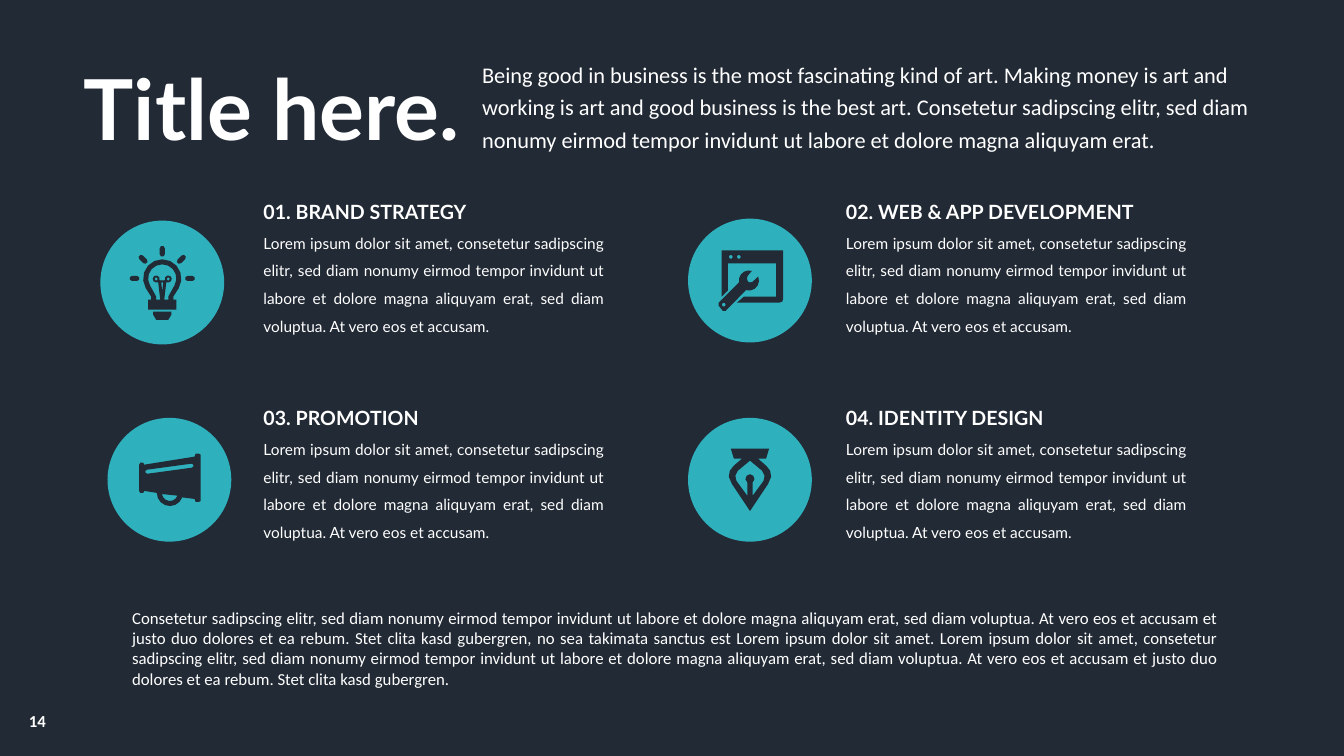
from dataclasses import dataclass
from math import atan2, cos, degrees, radians, sin
from typing import Any

from pptx import Presentation
from pptx.dml.color import RGBColor
from pptx.enum.shapes import MSO_SHAPE
from pptx.enum.text import MSO_AUTO_SIZE, PP_ALIGN
from pptx.util import Cm, Pt

Point = tuple[float, float]
Contour = list[Point]


@dataclass(frozen=True)
class Theme:
    """Colours, fonts and type sizes of the slide."""
    dark: RGBColor = RGBColor(0x22, 0x2A, 0x35)
    teal: RGBColor = RGBColor(0x2E, 0xB0, 0xBD)
    white: RGBColor = RGBColor(0xFF, 0xFF, 0xFF)
    heading_font: str = "Lato"
    body_font: str = "Calibri"
    title: int = 60
    intro: int = 16
    label: int = 14
    note: int = 12
    detail: int = 11


@dataclass(frozen=True)
class Service:
    """One service with its label, column, row, badge corner and icon."""
    label: str
    label_width: float
    column: int
    row: int
    badge_left: float
    badge_top: float
    icon: list[Contour]


THEME = Theme()
BADGE_SIZE = 3.12
ICON_UNIT = 0.0254
TEXT_LEFT, COLUMN_STEP = 6.39, 14.68
LABEL_TOP, ROW_STEP = 4.91, 5.2
DETAIL = ("Lorem ipsum dolor sit amet, consetetur sadipscing elitr, sed diam nonumy eirmod tempor "
          "invidunt ut labore et dolore magna aliquyam erat, sed diam voluptua. "
          "At vero eos et accusam.")
INTRO = ("Being good in business is the most fascinating kind of art. Making money is art and "
         "working is art and good business is the best art. Consetetur sadipscing elitr, sed diam "
         "nonumy eirmod tempor invidunt ut labore et dolore magna aliquyam erat.")
NOTE = ("Consetetur sadipscing elitr, sed diam nonumy eirmod tempor invidunt ut labore et dolore "
        "magna aliquyam erat, sed diam voluptua. At vero eos et accusam et justo duo dolores et ea "
        "rebum. Stet clita kasd gubergren, no sea takimata sanctus est Lorem ipsum dolor sit amet. "
        "Lorem ipsum dolor sit amet, consetetur sadipscing elitr, sed diam nonumy eirmod tempor "
        "invidunt ut labore et dolore magna aliquyam erat, sed diam voluptua. At vero eos et "
        "accusam et justo duo dolores et ea rebum. Stet clita kasd gubergren.")


def arc(x: float, y: float, radius: float, start: float = 0, end: float = 360) -> Contour:
    """Return points along an arc in degrees, fewer on a small radius."""
    steps = round(abs(end - start) / (60 if radius < 3 else 45 if radius < 6 else 24))
    angles = [radians(start + (end - start) * step / steps) for step in range(steps + 1)]
    return [(x + radius * cos(angle), y + radius * sin(angle)) for angle in angles]


def capsule(x1: float, y1: float, x2: float, y2: float, radius: float) -> Contour:
    """Return the outline of a bar with round ends."""
    turn = degrees(atan2(y2 - y1, x2 - x1))
    return arc(x1, y1, radius, turn + 90, turn + 270) + arc(x2, y2, radius, turn - 90, turn + 90)


def mirrored(half: Contour) -> Contour:
    """Close a left half with its reflection across the vertical axis."""
    return half + [(-x, y) for x, y in reversed(half)]


def bulb_icon() -> list[Contour]:
    """Return the contours of a light bulb with five rays."""
    rays = [capsule(0, -34, 0, -28, 2.5)]
    for side in (-1, 1):
        rays += [capsule(side * 30, -4, side * 25, -4, 2.5),
                 capsule(side * 21, -25, side * 17, -21, 2.5)]
    glass = mirrored(arc(0, -4, 19, 270, 150)
                     + [(-11, 14), (-11, 17), (-14, 17), (-14, 27)])
    inside = mirrored(arc(0, -4, 14, 270, 150) + [(-6, 14), (-6, 17), (-2, 17), (-4, 0)]
                      + arc(-6, -3.5, 3.5, 90, 380) + [(-1, -2)])
    foot = mirrored([(-9, 29), (-9, 32), (-6, 37)])
    filament = [arc(-6, -3.5, 1.5), arc(6, -3.5, 1.5), [(0, 9), (-1, 0), (1, 0)]]
    return [*rays, glass, inside, foot, *filament]


def browser_icon() -> list[Contour]:
    """Return the contours of a browser window with a wrench."""
    window = [(-28, -30), (33, -30), (33, 18), (32, 21), (29, 22), (-13, 22), (-6, 16),
              (26, 16), (26, -17), (-22, -17), (-22, 10), (-28, 16)]
    wrench = (arc(-1, 0, 10, -24, 107) + [(-24, 30), (-27, 30), (-31, 25), (-31, 22)]
              + arc(-1, 0, 10, 170, 287) + [(-2, -5), (-3, -2), (-2, 1), (0, 2), (3, 1)])
    return [window, wrench, arc(-26, 24, 2), arc(-19, -23.5, 2), arc(-11, -23.5, 2)]


def megaphone_icon() -> list[Contour]:
    """Return the contours of a megaphone."""
    horn = ([(-29, -17), (-26, -17), (-25, -15), (25, -23), (26, -26), (29, -26), (31, -25),
             (31, 21), (29, 22), (26, 22), (25, 19)] + arc(0.5, 13, 13, 20, 180)
            + [(-25, 11), (-26, 13), (-29, 13), (-30, 11), (-30, -15)])
    return [horn, arc(0.5, 13, 8, 20, 172), capsule(-22, -8, 22, -14, 2)]


def pen_icon() -> list[Contour]:
    """Return the contours of a pen nib."""
    nib = mirrored([(-19, -31), (-16, -21), (-8, -21), (-16, -14), (-20, -9), (-21, -3),
                    (-18, 4), (0, 31)])
    inside = mirrored([(0, -19), (-12, -9), (-14.5, -4), (-13.5, 1), (-2.5, 16), (-2.5, 5)]
                      + arc(0, -1, 4.5, 125, 270))
    return [nib, inside]


SERVICES = [
    Service("01. BRAND STRATEGY", 5.72, 0, 0, 2.53, 5.56, bulb_icon()),
    Service("03. PROMOTION", 4.47, 0, 1, 2.71, 10.53, megaphone_icon()),
    Service("02. WEB & APP DEVELOPMENT", 7.85, 1, 0, 17.34, 5.51, browser_icon()),
    Service("04. IDENTITY DESIGN", 5.49, 1, 1, 17.34, 10.53, pen_icon()),
]


def add_text(shapes: Any, text: str, left: float, top: float, width: float, height: float, *,
             size: int, font: str = THEME.heading_font, bold: bool = False, wrap: bool = True,
             grow: bool = True, align: PP_ALIGN = PP_ALIGN.LEFT,
             line_spacing: Any = None, space_before: int = 0) -> None:
    """Add a white one-paragraph text box, placed in centimetres."""
    frame = shapes.add_textbox(Cm(left), Cm(top), Cm(width), Cm(height)).text_frame
    frame.word_wrap = wrap
    frame.auto_size = MSO_AUTO_SIZE.SHAPE_TO_FIT_TEXT if grow else MSO_AUTO_SIZE.NONE
    paragraph = frame.paragraphs[0]
    paragraph.alignment = align
    paragraph.line_spacing = line_spacing
    paragraph.space_before = Pt(space_before)
    run = paragraph.add_run()
    run.text = text
    run.font.name, run.font.size, run.font.bold = font, Pt(size), bold
    run.font.color.rgb = THEME.white


def paint(shape: Any, color: RGBColor) -> None:
    """Give a shape a flat fill without line or shadow."""
    shape.fill.solid()
    shape.fill.fore_color.rgb = color
    shape.line.fill.background()
    shape.shadow.inherit = False


def add_icon(shapes: Any, contours: list[Contour], center_x: float, center_y: float) -> None:
    """Draw all contours as one freeform around a centre."""
    placed = [[(Cm(center_x + x * ICON_UNIT), Cm(center_y + y * ICON_UNIT)) for x, y in contour]
              for contour in contours]
    builder = shapes.build_freeform(*placed[0][0])
    for index, contour in enumerate(placed):
        if index:
            builder.move_to(*contour[0])
        builder.add_line_segments(contour[1:], close=True)
    paint(builder.convert_to_shape(), THEME.dark)


def add_service(slide: Any, service: Service) -> None:
    """Draw a service as a group of badge, icon, label and detail."""
    shapes = slide.shapes.add_group_shape().shapes
    badge = shapes.add_shape(MSO_SHAPE.OVAL, Cm(service.badge_left), Cm(service.badge_top),
                             Cm(BADGE_SIZE), Cm(BADGE_SIZE))
    paint(badge, THEME.teal)
    add_icon(shapes, service.icon, service.badge_left + BADGE_SIZE / 2,
             service.badge_top + BADGE_SIZE / 2)
    left = TEXT_LEFT + service.column * COLUMN_STEP
    top = LABEL_TOP + service.row * ROW_STEP
    add_text(shapes, service.label, left, top, service.label_width, 0.86,
             size=THEME.label, bold=True, wrap=False)
    add_text(shapes, DETAIL, left, top + 0.62, 9.09, 3.07,
             size=THEME.detail, align=PP_ALIGN.JUSTIFY, line_spacing=1.5)


def main() -> None:
    """Build the services slide and save it."""
    presentation = Presentation()
    presentation.slide_width, presentation.slide_height = Cm(33.87), Cm(19.05)
    slide = presentation.slides.add_slide(presentation.slide_layouts[6])
    slide.background.fill.solid()
    slide.background.fill.fore_color.rgb = THEME.dark
    add_text(slide.shapes, "14", 0.43, 17.79, 1.02, 0.76, size=THEME.note,
             font=THEME.body_font, bold=True, wrap=False, align=PP_ALIGN.CENTER)
    for service in SERVICES:
        add_service(slide, service)
    add_text(slide.shapes, NOTE, 3.08, 15.19, 27.89, 2.31, size=THEME.note,
             font=THEME.body_font, align=PP_ALIGN.JUSTIFY)
    add_text(slide.shapes, INTRO, 11.9, 1.29, 20.04, 2.72, size=THEME.intro,
             font=THEME.body_font, line_spacing=Pt(23))
    add_text(slide.shapes, "Title here.", 1.86, 1.3, 11.33, 1.12, size=THEME.title,
             bold=True, grow=False, space_before=10)
    presentation.save("out.pptx")


if __name__ == "__main__":
    main()
